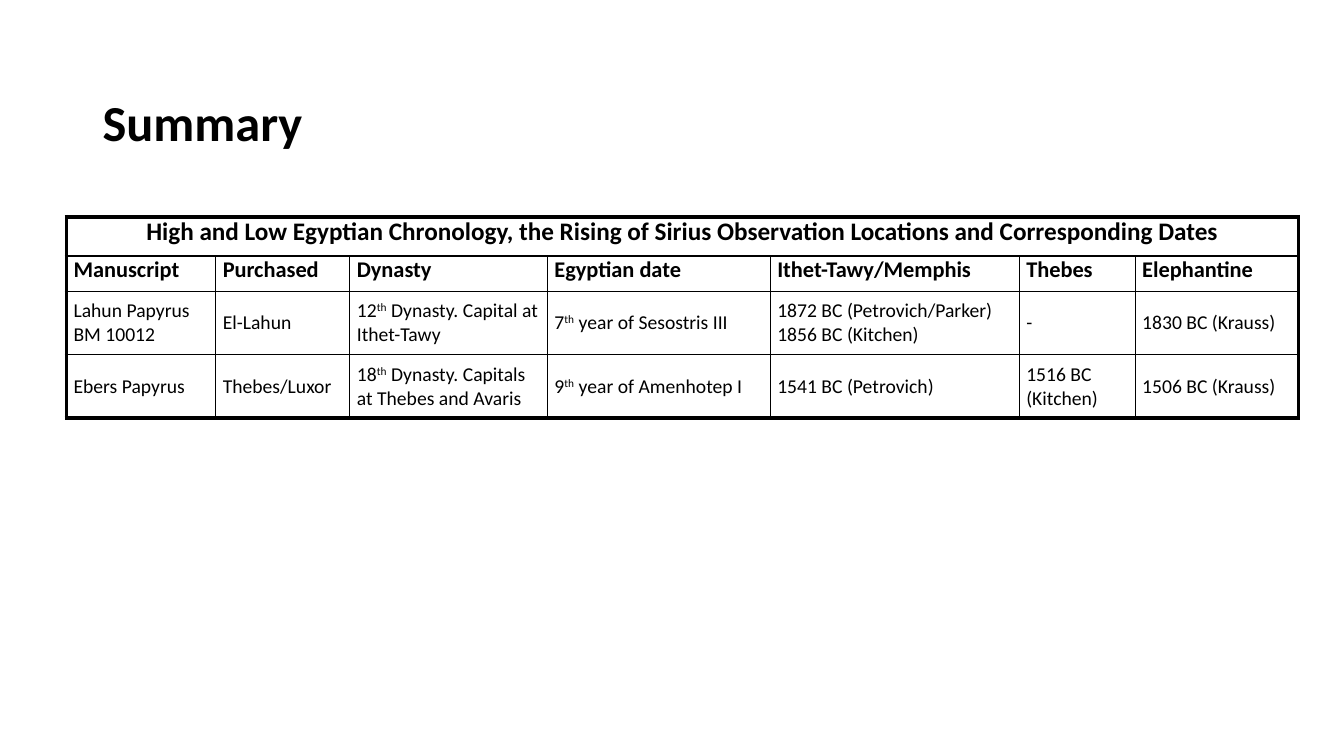
from lxml import etree
from pptx import Presentation
from pptx import util as u
from pptx.dml.color import RGBColor
from pptx.enum import text
from pptx.oxml.ns import qn

COLORS = {"ink": "000000"}
INK = RGBColor.from_string(COLORS["ink"])
FONT = "Calibri"
THIN, THICK = 1, 3
COLUMNS = [1.48, 1.33, 1.96, 2.21, 2.47, 1.15, 1.62]
ROWS = [0.39, 0.35, 0.63, 0.63]
ROW_FORMATS = [
    {"size": u.Pt(18), "bold": True},
    {"size": u.Pt(16), "bold": True},
    {"size": u.Pt(14), "bold": False},
    {"size": u.Pt(14), "bold": False},
]
# A newline starts a paragraph; carets enclose a superscript
CONTENT = [
    ["High and Low Egyptian Chronology, the Rising of Sirius Observation Locations "
     "and Corresponding Dates"],
    ["Manuscript", "Purchased", "Dynasty", "Egyptian date", "Ithet-Tawy/Memphis",
     "Thebes", "Elephantine"],
    ["Lahun Papyrus\nBM 10012", "El-Lahun", "12^th^ Dynasty. Capital at Ithet-Tawy",
     "7^th^ year of Sesostris III", "1872 BC (Petrovich/Parker)\n1856 BC (Kitchen)",
     "-", "1830 BC (Krauss)"],
    ["Ebers Papyrus", "Thebes/Luxor", "18^th^ Dynasty. Capitals at Thebes and Avaris",
     "9^th^ year of Amenhotep I", "1541 BC (Petrovich)", "1516 BC (Kitchen)",
     "1506 BC (Krauss)"],
]


def write(para, words, formats):
    for index, part in enumerate(words.split("^")):
        span = para.add_run()
        span.text = part
        span.font.name = FONT
        span.font.color.rgb = INK
        for name, value in formats.items():
            setattr(span.font, name, value)
        if index % 2:
            span.font._element.set("baseline", "30000")


def add_border(cell, side, points):
    line = etree.SubElement(cell._tc.get_or_add_tcPr(), qn("a:ln" + side),
                            w=str(u.Pt(points)), cmpd="sng")
    fill = etree.SubElement(line, qn("a:solidFill"))
    etree.SubElement(fill, qn("a:srgbClr"), val=COLORS["ink"])
    etree.SubElement(line, qn("a:prstDash"), val="solid")


deck = Presentation()
deck.slide_width, deck.slide_height = u.Inches(13.33), u.Inches(7.5)
page = deck.slides.add_slide(deck.slide_layouts[6])

# Title
box = page.shapes.add_textbox(u.Inches(0.92), u.Inches(0.52), u.Inches(11.5), u.Inches(1.45))
box.text_frame.word_wrap = True
box.text_frame.vertical_anchor = text.MSO_ANCHOR.MIDDLE
heading = box.text_frame.paragraphs[0]
heading.line_spacing = 0.9
write(heading, "Summary", {"size": u.Pt(36), "bold": True})

# Table grid
table = page.shapes.add_table(len(ROWS), len(COLUMNS), u.Inches(0.66), u.Inches(2.15),
                              u.Inches(sum(COLUMNS)), u.Inches(sum(ROWS))).table
table.first_row = table.horz_banding = False
for column, width in zip(table.columns, COLUMNS):
    column.width = u.Inches(width)
for row, height in zip(table.rows, ROWS):
    row.height = u.Inches(height)
table.cell(0, 0).merge(table.cell(0, len(COLUMNS) - 1))

# Cells: thick outer frame, thin inner lines
for r, row in enumerate(CONTENT):
    for c, words in enumerate(row):
        cell = table.cell(r, c)
        cell.margin_left = cell.margin_right = u.Inches(0.07)
        cell.margin_top = cell.margin_bottom = 0
        cell.vertical_anchor = text.MSO_ANCHOR.MIDDLE if r > 1 else text.MSO_ANCHOR.TOP
        outer = {"L": c == 0, "R": c == len(row) - 1,
                 "T": r == 0, "B": r == len(ROWS) - 1}
        for side, is_outer in outer.items():
            add_border(cell, side, THICK if is_outer else THIN)
        cell.fill.background()
        for index, line in enumerate(words.split("\n")):
            frame = cell.text_frame
            para = frame.add_paragraph() if index else frame.paragraphs[0]
            para.alignment = text.PP_ALIGN.LEFT if r else text.PP_ALIGN.CENTER
            write(para, line, ROW_FORMATS[r])

deck.save("out.pptx")
